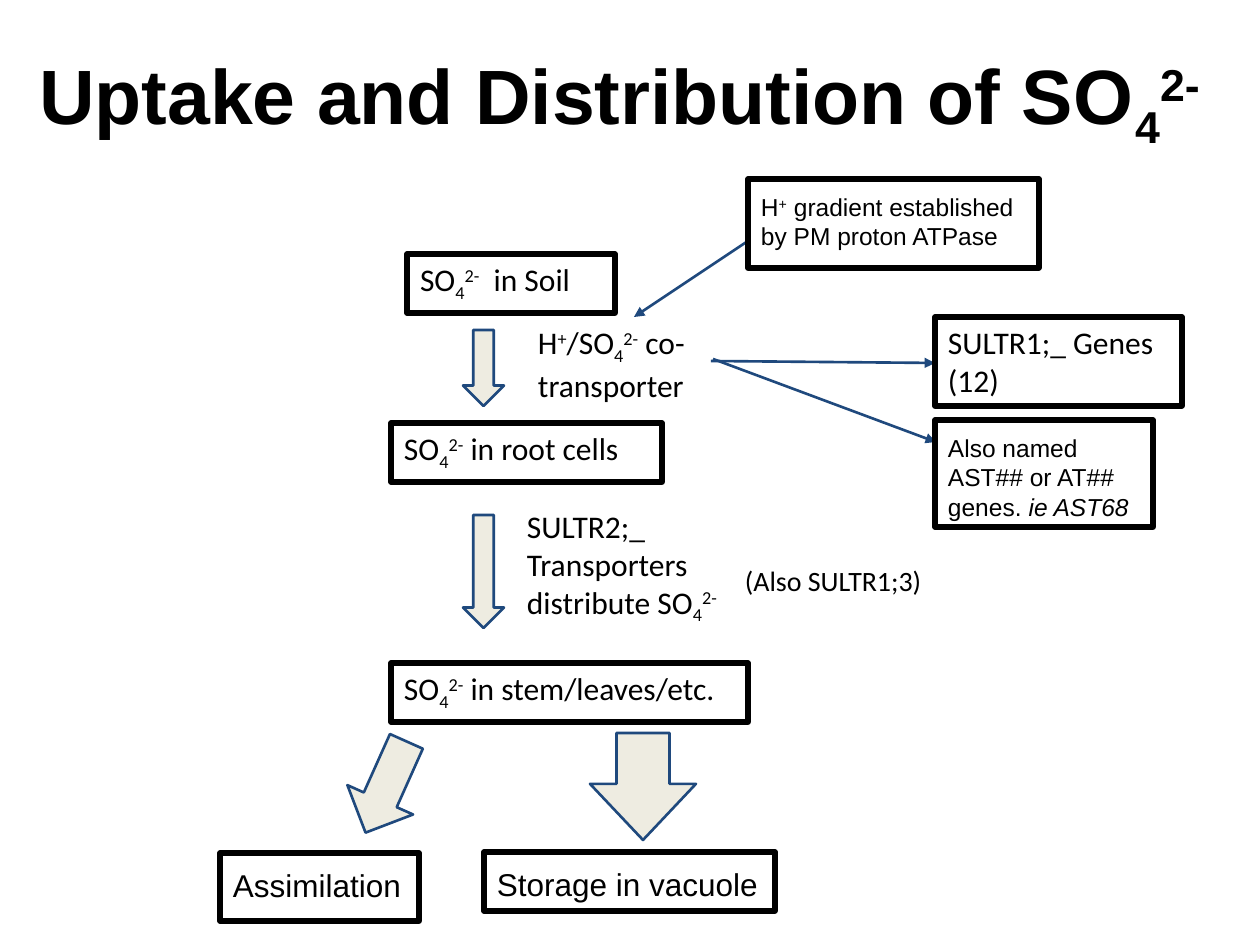
from typing import NamedTuple

from lxml import etree
from pptx import Presentation
from pptx import util as u
from pptx.dml.color import RGBColor
from pptx.enum import shapes, text
from pptx.oxml.ns import qn

PX = 914400 / 126
COLORS = {"ink": "000000", "arrow_line": "1F497D", "arrow_fill": "EEECE1"}
BASELINES = {"~": "-25000", "^": "30000"}


class Label(NamedTuple):
    """A text with runs parted by |; a run may start with ~ (sub), ^ (super) or * (italic)."""
    left: int
    top: int
    width: int
    height: int
    content: str
    font: str = "Calibri"
    size: int = 18
    boxed: bool = True
    inset: int = 6


class BlockArrow(NamedTuple):
    left: int
    top: int
    width: int
    height: int
    rotation: float = 180
    head: float = 0.5


class Pointer(NamedTuple):
    x1: int
    y1: int
    x2: int
    y2: int


TITLE = Label(0, 21, 1239, 158, "Uptake and Distribution of SO|~4|^2-", "Arial", 44, False, 13)

LABELS = [
    Label(407, 254, 208, 59, "SO|~4|^2-|  in Soil"),
    Label(525, 317, 218, 89, "H|^+|/SO|~4|^2-| co-transporter", boxed=False),
    Label(935, 317, 247, 89, "SULTR1;_ Genes (12)"),
    Label(391, 423, 271, 59, "SO|~4|^2-| in root cells"),
    Label(514, 501, 291, 127, "SULTR2;_ Transporters distribute SO|~4|^2-", boxed=False),
    Label(732, 558, 263, 50, "(Also SULTR1;3)", size=16, boxed=False),
    Label(391, 663, 357, 59, "SO|~4|^2-| in stem/leaves/etc."),
    Label(748, 179, 291, 89, "H|^+| gradient established by PM proton ATPase", "Arial", 14, inset=13),
    Label(935, 420, 218, 107, "Also named AST## or AT## genes. |*ie AST68", "Arial", 14, inset=13),
    Label(484, 852, 291, 59, "Storage in vacuole", "Arial", inset=13),
    Label(220, 853, 199, 68, "Assimilation", "Arial", inset=13),
]

POINTERS = [
    Pointer(748, 241, 634, 317),
    Pointer(711, 361, 935, 363),
    Pointer(713, 359, 936, 442),
]

BLOCK_ARROWS = [
    BlockArrow(463, 330, 41, 76),
    BlockArrow(463, 515, 41, 113),
    BlockArrow(590, 733, 106, 107, head=0.53),
    BlockArrow(350, 737, 72, 100, rotation=204.1),
]


def px(value: float) -> u.Emu:
    return u.Emu(round(value * PX))


def rgb(name: str) -> RGBColor:
    return RGBColor.from_string(COLORS[name])


def write_label(shape, label: Label, bold: bool = False) -> None:
    frame = shape.text_frame
    frame.word_wrap = True
    frame.auto_size = text.MSO_AUTO_SIZE.NONE
    frame.vertical_anchor = text.MSO_ANCHOR.TOP
    frame.margin_left = frame.margin_right = px(13)
    frame.margin_top = frame.margin_bottom = px(label.inset)
    paragraph = frame.paragraphs[0]
    paragraph.alignment = text.PP_ALIGN.LEFT
    for piece in label.content.split("|"):
        mark = piece[0] if piece[0] in "~^*" else ""
        run = paragraph.add_run()
        run.text = piece[len(mark):]
        run.font.name = label.font
        run.font.size = u.Pt(label.size)
        run.font.bold = bold
        run.font.color.rgb = rgb("ink")
        if mark == "*":
            run.font.italic = True
        elif mark:
            run.font._element.set("baseline", BASELINES[mark])


def draw_title(slide, label: Label) -> None:
    title = slide.shapes.title
    title.left, title.top, title.width, title.height = map(px, label[:4])
    write_label(title, label, bold=True)
    title.text_frame.vertical_anchor = text.MSO_ANCHOR.MIDDLE
    title.text_frame.paragraphs[0].alignment = text.PP_ALIGN.CENTER


def draw_label(slide, label: Label) -> None:
    bounds = map(px, label[:4])
    if label.boxed:
        shape = slide.shapes.add_shape(shapes.MSO_SHAPE.RECTANGLE, *bounds)
        shape.shadow.inherit = False
        shape.fill.background()
        shape.line.color.rgb = rgb("ink")
        shape.line.width = u.Pt(3)
    else:
        shape = slide.shapes.add_textbox(*bounds)
    write_label(shape, label)


def draw_pointer(slide, pointer: Pointer) -> None:
    connector = slide.shapes.add_connector(shapes.MSO_CONNECTOR.STRAIGHT, *map(px, pointer))
    connector.line.color.rgb = rgb("arrow_line")
    connector.line.width = u.Pt(1.5)
    etree.SubElement(connector.line._get_or_add_ln(), qn("a:tailEnd"), type="triangle")
    etree.SubElement(connector._element.spPr, qn("a:effectLst"))


def draw_block_arrow(slide, arrow: BlockArrow) -> None:
    shape = slide.shapes.add_shape(shapes.MSO_SHAPE.UP_ARROW, *map(px, arrow[:4]))
    shape.rotation = arrow.rotation
    shape.adjustments[0] = 0.5
    shape.adjustments[1] = arrow.head
    shape.shadow.inherit = False
    shape.fill.solid()
    shape.fill.fore_color.rgb = rgb("arrow_fill")
    shape.line.color.rgb = rgb("arrow_line")
    shape.line.width = u.Pt(1.5)


def main() -> None:
    presentation = Presentation()
    presentation.slide_width, presentation.slide_height = px(1260), px(945)
    slide = presentation.slides.add_slide(presentation.slide_layouts[5])
    draw_title(slide, TITLE)
    for pointer in POINTERS:
        draw_pointer(slide, pointer)
    for label in LABELS:
        draw_label(slide, label)
    for arrow in BLOCK_ARROWS:
        draw_block_arrow(slide, arrow)
    presentation.save("out.pptx")


if __name__ == "__main__":
    main()
